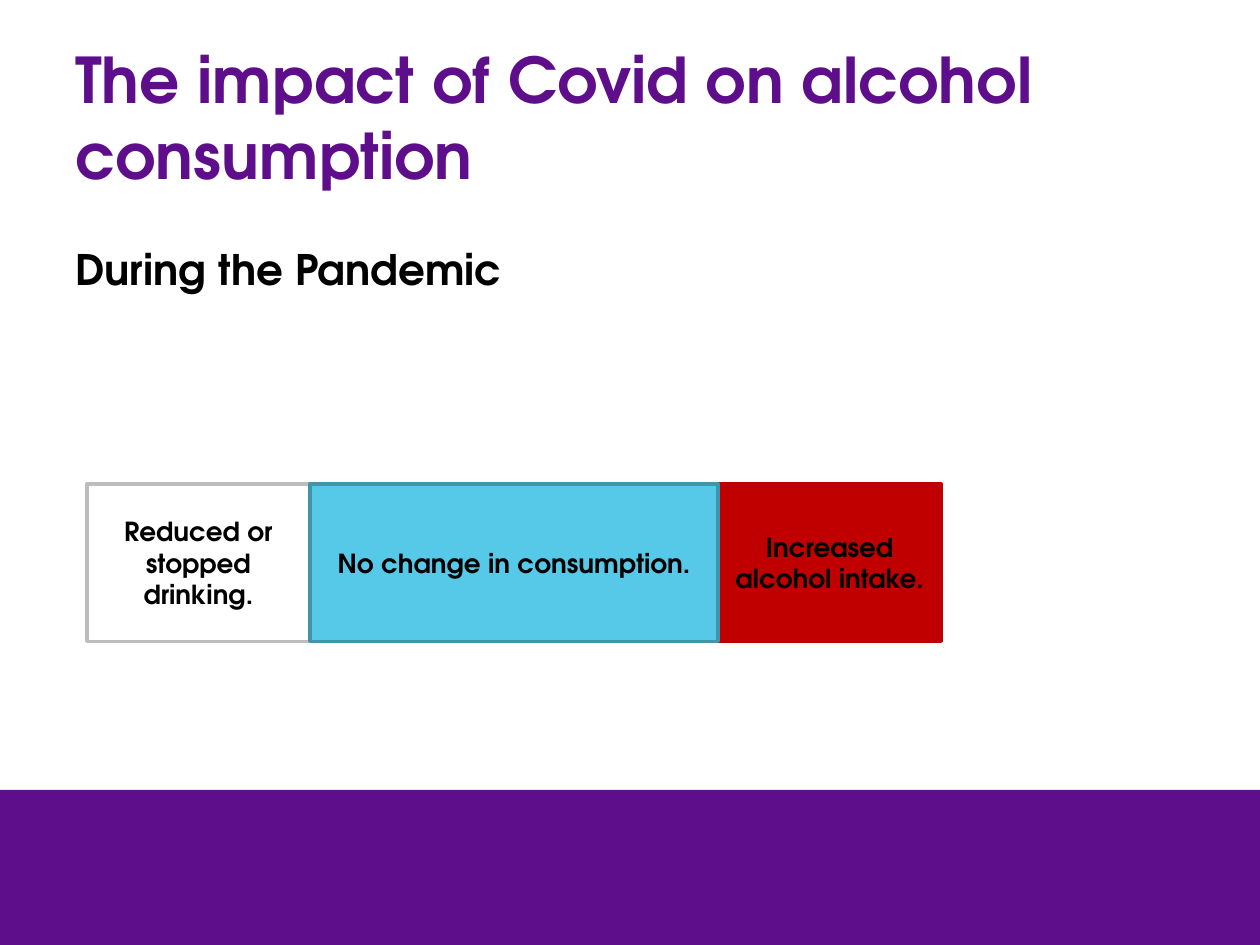
from dataclasses import dataclass

from pptx import Presentation
from pptx.dml.color import RGBColor
from pptx.enum import shapes, text
from pptx.util import Pt


@dataclass(frozen=True)
class Theme:
    font: str = "TeX Gyre Adventor"
    purple: str = "5E0D8B"
    black: str = "000000"
    white: str = "FFFFFF"
    grey: str = "BDBDBD"
    red: str = "C00000"
    blue: str = "57C9E8"
    dark_blue: str = "4095AC"
    title_size: int = 36
    subtitle_size: int = 24
    label_size: int = 15


THEME = Theme()
SLIDE_W, SLIDE_H = 720, 540
BAR_LEFT, BAR_TOP, BAR_H = 49.7, 276.5, 90
SIDE_W, MIDDLE_W = 127.4, 233.3


def rgb(color):
    return RGBColor.from_string(color)


def write(sp, words, size, color=THEME.black, align=text.PP_ALIGN.LEFT,
          anchor=text.MSO_ANCHOR.MIDDLE):
    tf = sp.text_frame
    tf.word_wrap = True
    tf.vertical_anchor = anchor
    p = tf.paragraphs[0]
    p.alignment = align
    r = p.add_run()
    r.text = words
    r.font.name = THEME.font
    r.font.size = Pt(size)
    r.font.bold = True
    r.font.color.rgb = rgb(color)


def add_text(s, left, top, width, height, words, size, **fmt):
    box = s.shapes.add_textbox(Pt(left), Pt(top), Pt(width), Pt(height))
    write(box, words, size, **fmt)


def add_box(s, left, top, width, height, fill, line=None):
    sp = s.shapes.add_shape(shapes.MSO_SHAPE.RECTANGLE,
                            Pt(left), Pt(top), Pt(width), Pt(height))
    sp.shadow.inherit = False
    sp.fill.solid()
    sp.fill.fore_color.rgb = rgb(fill)
    if line:
        sp.line.color.rgb = rgb(line)
        sp.line.width = Pt(2)
    else:
        sp.line.fill.background()
    return sp


def add_consumption_bar(s):
    """Draw the middle segment last, so that its outline covers both joins."""
    middle = BAR_LEFT + SIDE_W
    segments = [
        (BAR_LEFT, SIDE_W, THEME.white, THEME.grey, "Reduced or stopped drinking."),
        (middle + MIDDLE_W, SIDE_W, THEME.red, THEME.red, "Increased alcohol intake."),
        (middle, MIDDLE_W, THEME.blue, THEME.dark_blue, "No change in consumption."),
    ]
    for left, width, fill, line, label in segments:
        sp = add_box(s, left, BAR_TOP, width, BAR_H, fill, line)
        write(sp, label, THEME.label_size, align=text.PP_ALIGN.CENTER)


def main():
    prs = Presentation()
    prs.slide_width, prs.slide_height = Pt(SLIDE_W), Pt(SLIDE_H)
    s = prs.slides.add_slide(prs.slide_layouts[6])
    s.background.fill.solid()
    s.background.fill.fore_color.rgb = rgb(THEME.white)

    footer_top = 451.4
    add_box(s, 0, footer_top, SLIDE_W, SLIDE_H - footer_top, THEME.purple)
    add_text(s, 36, 21.6, 648, 90, "The impact of Covid on alcohol consumption",
             THEME.title_size, color=THEME.purple)
    add_text(s, 36, 121, 318.2, 50.4, "During the Pandemic",
             THEME.subtitle_size, anchor=text.MSO_ANCHOR.BOTTOM)
    add_consumption_bar(s)
    prs.save("out.pptx")


if __name__ == "__main__":
    main()
